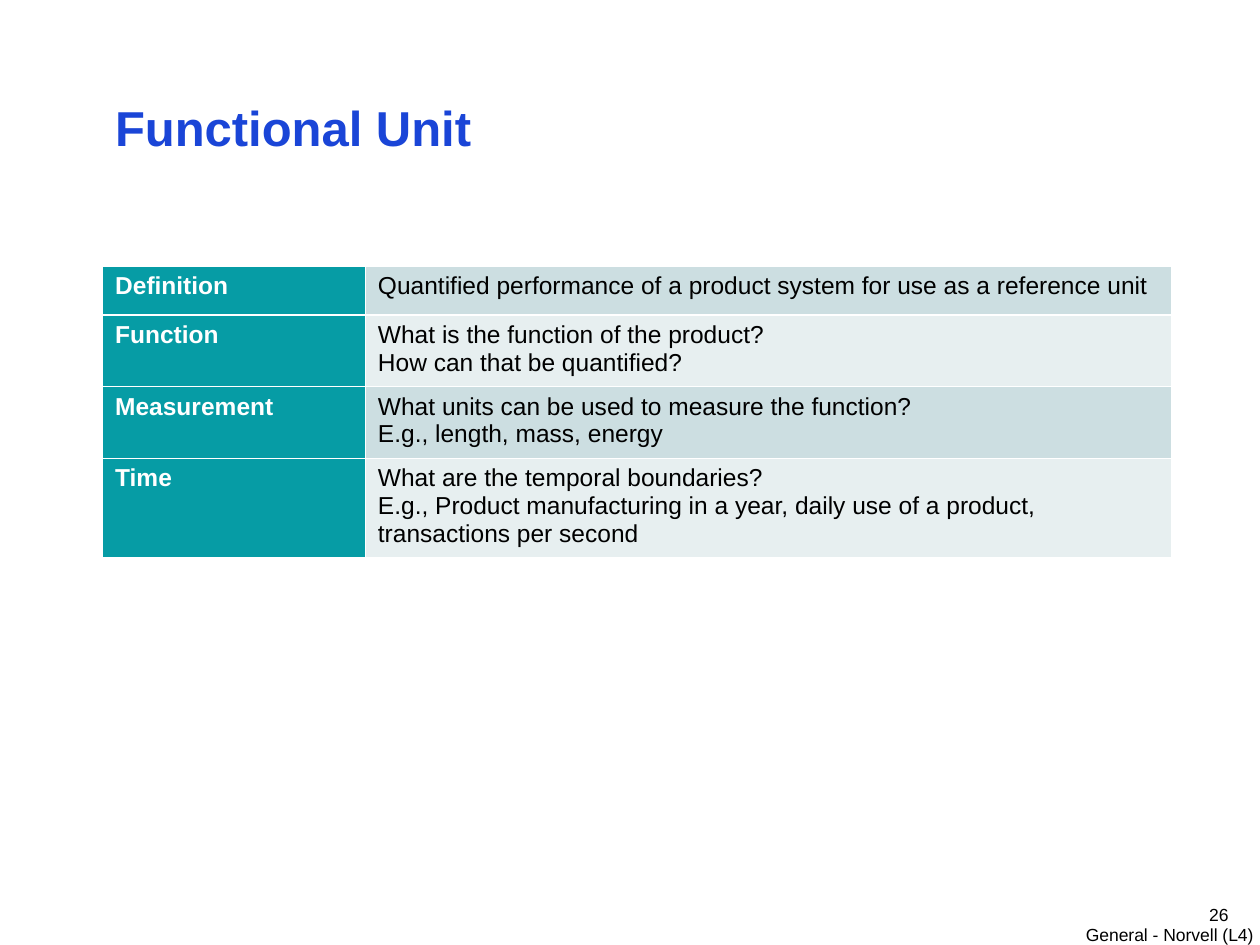
from dataclasses import dataclass

from lxml import etree
from pptx import Presentation
from pptx.dml.color import RGBColor
from pptx.enum import text as t
from pptx.oxml import ns
from pptx.util import Pt

BLUE = RGBColor(0x1A, 0x45, 0xD7)
TEAL = RGBColor(0x06, 0x9C, 0xA5)
BANDS = (RGBColor(0xCC, 0xDE, 0xE1), RGBColor(0xE7, 0xEF, 0xF0))
WHITE = RGBColor(0xFF, 0xFF, 0xFF)
BLACK = RGBColor(0, 0, 0)
FONT = "Arial"


@dataclass
class Topic:
    label: str
    lines: tuple[str, ...]
    height: float


@dataclass
class Footer:
    words: str
    left: float
    top: float
    width: float
    height: float
    align: t.PP_ALIGN
    anchor: t.MSO_ANCHOR


TOPICS = (
    Topic("Definition", ("Quantified performance of a product system for use as a reference unit",), 28),
    Topic("Function", ("What is the function of the product?",
                       "How can that be quantified?"), 41),
    Topic("Measurement", ("What units can be used to measure the function?",
                          "E.g., length, mass, energy"), 41),
    Topic("Time", ("What are the temporal boundaries?",
                   "E.g., Product manufacturing in a year, daily use of a product, "
                   "transactions per second"), 57),
)
FOOTERS = (
    Footer("General - Norvell (L4)", 620.5, 527.8, 102, 12.2, t.PP_ALIGN.LEFT, t.MSO_ANCHOR.TOP),
    Footer("26", 666, 515.5, 36, 14.4, t.PP_ALIGN.RIGHT, t.MSO_ANCHOR.MIDDLE),
)
COLUMN_WIDTHS = (150.2, 460.8)


def write(frame, lines: tuple[str, ...], size: float, color: RGBColor,
          bold: bool = False, align: t.PP_ALIGN = t.PP_ALIGN.LEFT) -> None:
    for index, line in enumerate(lines):
        para = frame.add_paragraph() if index else frame.paragraphs[0]
        para.alignment = align
        span = para.add_run()
        span.text = line
        span.font.name, span.font.size = FONT, Pt(size)
        span.font.bold, span.font.color.rgb = bold, color


def add_borders(cell) -> None:
    properties = cell._tc.get_or_add_tcPr()
    for index, side in enumerate(("lnL", "lnR", "lnT", "lnB")):
        line = etree.Element(ns.qn(f"a:{side}"), w=str(Pt(1)))
        fill = etree.SubElement(line, ns.qn("a:solidFill"))
        etree.SubElement(fill, ns.qn("a:srgbClr"), val=str(WHITE))
        properties.insert(index, line)


def fill_cell(cell, lines: tuple[str, ...], fill: RGBColor, color: RGBColor, bold: bool) -> None:
    cell.fill.solid()
    cell.fill.fore_color.rgb = fill
    add_borders(cell)
    write(cell.text_frame, lines, 14, color, bold)


def add_topics(page) -> None:
    height = sum(topic.height for topic in TOPICS)
    table = page.shapes.add_table(len(TOPICS), 2, Pt(58.6), Pt(152),
                                  Pt(sum(COLUMN_WIDTHS)), Pt(height)).table
    table.first_row = False
    table.first_col = True
    for column, width in zip(table.columns, COLUMN_WIDTHS):
        column.width = Pt(width)
    for index, topic in enumerate(TOPICS):
        table.rows[index].height = Pt(topic.height)
        fill_cell(table.cell(index, 0), (topic.label,), TEAL, WHITE, True)
        fill_cell(table.cell(index, 1), topic.lines, BANDS[index % 2], BLACK, False)


def add_footer(page, footer: Footer) -> None:
    box = page.shapes.add_textbox(Pt(footer.left), Pt(footer.top), Pt(footer.width), Pt(footer.height))
    frame = box.text_frame
    frame.word_wrap = True
    frame.vertical_anchor = footer.anchor
    frame.margin_left = frame.margin_right = frame.margin_top = frame.margin_bottom = 0
    write(frame, (footer.words,), 10, BLACK, align=footer.align)


def main() -> None:
    deck = Presentation()
    deck.slide_width, deck.slide_height = Pt(720), Pt(540)
    page = deck.slides.add_slide(deck.slide_layouts[5])

    # Title
    title = page.shapes.title
    title.left, title.top, title.width, title.height = Pt(58.6), Pt(52), Pt(360), Pt(41)
    title.text_frame.auto_size = t.MSO_AUTO_SIZE.NONE
    title.text_frame.vertical_anchor = t.MSO_ANCHOR.TOP
    write(title.text_frame, ("Functional Unit",), 28, BLUE, True)

    # Table of topics
    add_topics(page)

    # Footer label and page number
    for footer in FOOTERS:
        add_footer(page, footer)

    deck.save("out.pptx")


if __name__ == "__main__":
    main()
